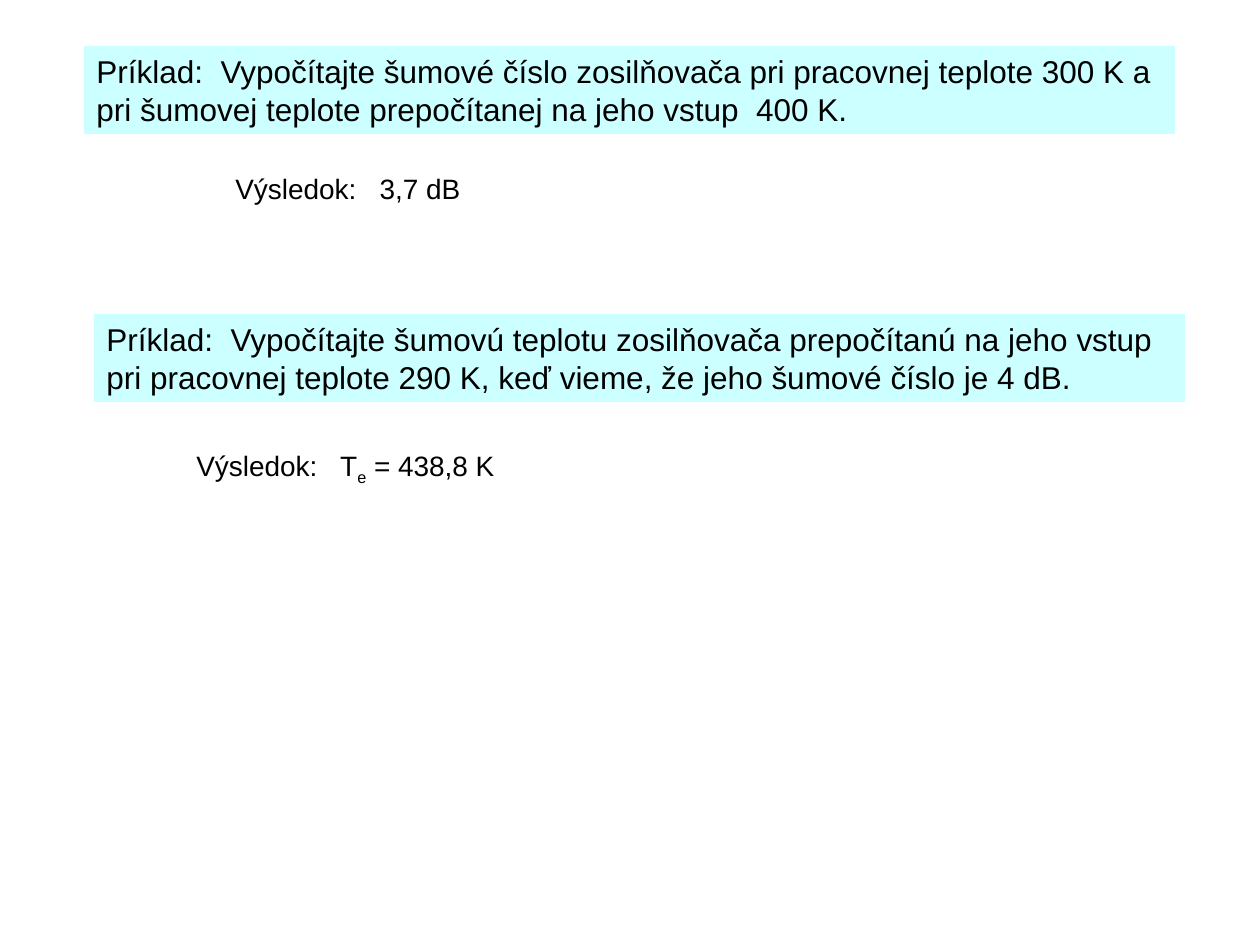
from dataclasses import dataclass

from pptx import Presentation
from pptx import util as u
from pptx.dml.color import RGBColor
from pptx.enum import shapes, text

PX = u.Inches(1) / 126


@dataclass(frozen=True)
class Theme:
    font: str = "Arial"
    ink: RGBColor = RGBColor(0x00, 0x00, 0x00)
    panel: RGBColor = RGBColor(0xCC, 0xFF, 0xFF)
    task_size: int = 18
    result_size: int = 16
    subscript: int = -25000


theme = Theme()


def px(length):
    return u.Emu(round(length * PX))


def write(shape, runs, size):
    """Fill the shape with one paragraph; runs are (wording, is_subscript)."""
    frame = shape.text_frame
    frame.word_wrap = True
    frame.vertical_anchor = text.MSO_ANCHOR.TOP
    paragraph = frame.paragraphs[0]
    paragraph.alignment = text.PP_ALIGN.LEFT
    paragraph.font.name = theme.font
    paragraph.font.size = u.Pt(size)
    paragraph.font.color.rgb = theme.ink
    for wording, is_subscript in runs:
        run = paragraph.add_run()
        run.text = wording
        if is_subscript:
            run.font._element.set("baseline", str(theme.subscript))


presentation = Presentation()
presentation.slide_width = px(1260)
presentation.slide_height = px(945)
slide = presentation.slides.add_slide(presentation.slide_layouts[6])

# Each example: task position and wording, result position and runs
examples = [
    (
        (84, 46),
        "Príklad:  Vypočítajte šumové číslo zosilňovača pri pracovnej teplote "
        "300 K a pri šumovej teplote prepočítanej na jeho vstup  400 K.",
        (223, 165),
        [("Výsledok:   3,7 dB", False)],
    ),
    (
        (94, 314),
        "Príklad:  Vypočítajte šumovú teplotu zosilňovača prepočítanú na jeho "
        "vstup pri pracovnej teplote 290 K, keď vieme, že jeho šumové číslo je 4 dB.",
        (184, 442),
        [("Výsledok:   T", False), ("e", True), (" = 438,8 K", False)],
    ),
]

for (task_left, task_top), task, (result_left, result_top), result in examples:
    # Task on a coloured panel
    panel = slide.shapes.add_shape(
        shapes.MSO_SHAPE.RECTANGLE, px(task_left), px(task_top), px(1091), px(88)
    )
    panel.shadow.inherit = False
    panel.fill.solid()
    panel.fill.fore_color.rgb = theme.panel
    panel.line.fill.background()
    write(panel, [(task, False)], theme.task_size)

    # Result below it
    answer = slide.shapes.add_textbox(
        px(result_left), px(result_top), px(635), px(47)
    )
    write(answer, result, theme.result_size)

presentation.save("out.pptx")
